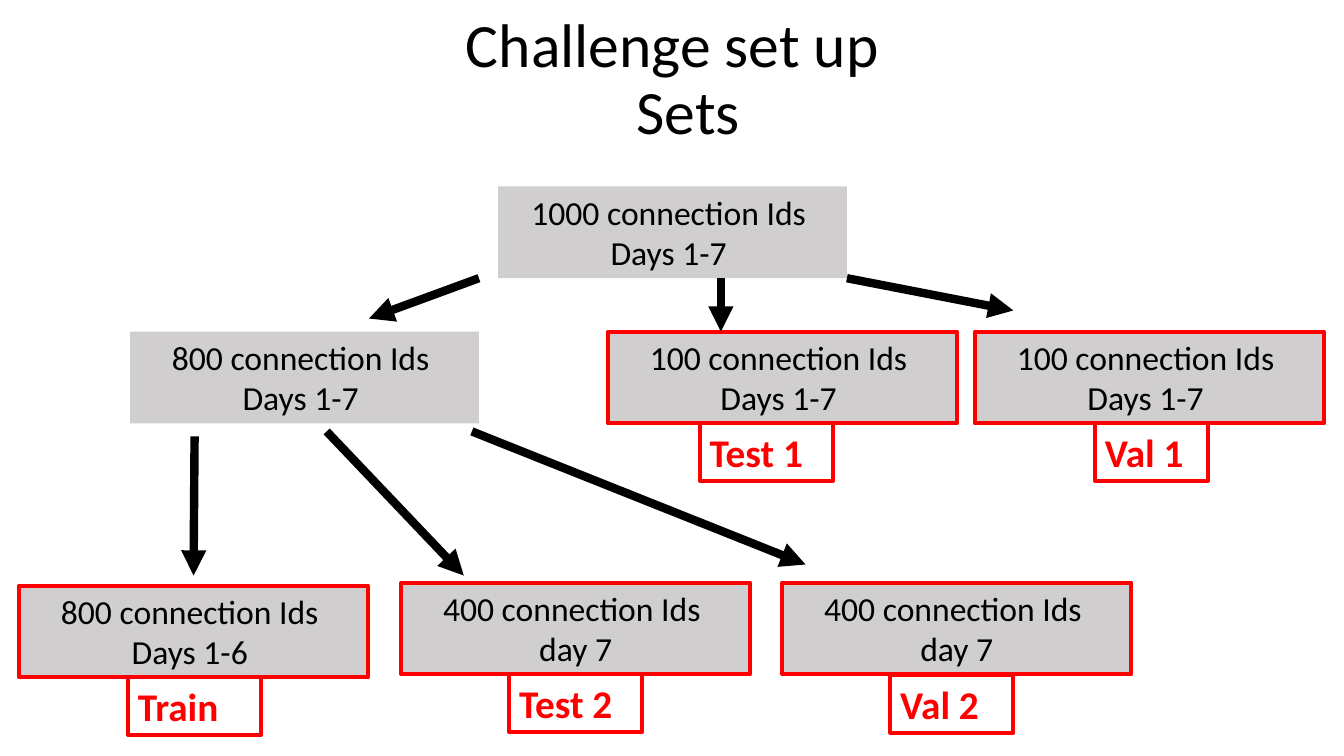
from dataclasses import dataclass

from lxml.etree import SubElement
from pptx import Presentation
from pptx.dml.color import RGBColor
from pptx.enum.shapes import MSO_CONNECTOR as Connector
from pptx.enum.text import MSO_ANCHOR as Anchor
from pptx.enum.text import MSO_AUTO_SIZE as AutoSize
from pptx.enum.text import PP_ALIGN as Align
from pptx.oxml.ns import qn
from pptx.slide import Slide
from pptx.text.text import _Paragraph as Paragraph
from pptx.util import Emu, Pt

PX_PER_INCH = 100
EMU_PER_PX = 914400 // PX_PER_INCH


@dataclass(frozen=True)
class Theme:
    font: str = "Calibri"
    ink: RGBColor = RGBColor(0x00, 0x00, 0x00)
    panel: RGBColor = RGBColor(0xD0, 0xCE, 0xCE)
    accent: RGBColor = RGBColor(0xFF, 0x00, 0x00)
    title_size: int = 44
    box_size: int = 24
    tag_size: int = 28
    outline: int = 3
    arrow: int = 6


@dataclass(frozen=True)
class IdSet:
    left: int
    top: int
    lines: tuple[str, ...]
    final: bool = True


@dataclass(frozen=True)
class Tag:
    left: int
    top: int
    width: int
    name: str


@dataclass(frozen=True)
class Arrow:
    x1: int
    y1: int
    x2: int
    y2: int


THEME = Theme()
SET_WIDTH, SET_HEIGHT, TAG_HEIGHT = 346, 91, 57
TITLE_INDENT = 31
TITLE_LINES = ("Challenge set up", "Sets")
WEEK = "Days 1-7 "

ID_SETS = (
    IdSet(494, 185, ("1000 connection Ids ", WEEK), final=False),
    IdSet(129, 329, ("800 connection Ids ", WEEK), final=False),
    IdSet(603, 329, ("100 connection Ids ", WEEK)),
    IdSet(967, 329, ("100 connection Ids ", WEEK)),
    IdSet(19, 581, ("800 connection Ids ", "Days 1-6 ")),
    IdSet(398, 578, ("400 connection Ids ", "day 7")),
    IdSet(776, 578, ("400 connection Ids ", "day 7")),
)
TAGS = (
    Tag(694, 420, 132, "Test 1"),
    Tag(1086, 420, 112, "Val 1"),
    Tag(127, 672, 132, "Train"),
    Tag(505, 669, 132, "Test 2"),
    Tag(883, 670, 122, "Val 2"),
)
ARROWS = (
    Arrow(715, 276, 715, 329),
    Arrow(840, 276, 1005, 308),
    Arrow(475, 276, 366, 316),
    Arrow(193, 433, 192, 571),
    Arrow(324, 428, 460, 571),
    Arrow(468, 428, 799, 560),
)


def px(length: int) -> Emu:
    return Emu(length * EMU_PER_PX)


def add_run(paragraph: Paragraph, text: str, size: int, color: RGBColor,
            bold: bool = False) -> None:
    run = paragraph.add_run()
    run.text = text
    run.font.name = THEME.font
    run.font.size = Pt(size)
    run.font.color.rgb = color
    run.font.bold = bold


def draw_title(slide: Slide) -> None:
    title = slide.shapes.title
    title.left, title.top, title.width, title.height = map(px, (92, 8, 1150, 145))
    frame = title.text_frame
    frame.vertical_anchor = Anchor.MIDDLE
    frame.auto_size = AutoSize.NONE
    heading = frame.paragraphs[0]
    heading.alignment = Align.CENTER
    heading.line_spacing = 0.9
    properties = heading._p.get_or_add_pPr()
    properties.set("marL", str(px(TITLE_INDENT)))
    properties.set("indent", str(px(-TITLE_INDENT)))
    for index, line in enumerate(TITLE_LINES):
        if index:
            heading.add_line_break()
        add_run(heading, line, THEME.title_size, THEME.ink)


def draw_id_set(slide: Slide, id_set: IdSet) -> None:
    box = slide.shapes.add_textbox(
        px(id_set.left), px(id_set.top), px(SET_WIDTH), px(SET_HEIGHT))
    box.fill.solid()
    box.fill.fore_color.rgb = THEME.panel
    if id_set.final:
        box.line.color.rgb = THEME.accent
        box.line.width = Pt(THEME.outline)
    frame = box.text_frame
    frame.word_wrap = True
    frame.auto_size = AutoSize.SHAPE_TO_FIT_TEXT
    for index, line in enumerate(id_set.lines):
        paragraph = frame.add_paragraph() if index else frame.paragraphs[0]
        paragraph.alignment = Align.CENTER
        add_run(paragraph, line, THEME.box_size, THEME.ink)


def draw_tag(slide: Slide, tag: Tag) -> None:
    box = slide.shapes.add_textbox(
        px(tag.left), px(tag.top), px(tag.width), px(TAG_HEIGHT))
    box.line.color.rgb = THEME.accent
    box.line.width = Pt(THEME.outline)
    frame = box.text_frame
    frame.word_wrap = True
    frame.auto_size = AutoSize.SHAPE_TO_FIT_TEXT
    add_run(frame.paragraphs[0], tag.name, THEME.tag_size, THEME.accent, bold=True)


def draw_arrow(slide: Slide, arrow: Arrow) -> None:
    link = slide.shapes.add_connector(
        Connector.STRAIGHT, px(arrow.x1), px(arrow.y1), px(arrow.x2), px(arrow.y2))
    link.line.color.rgb = THEME.ink
    link.line.width = Pt(THEME.arrow)
    SubElement(link.line._get_or_add_ln(), qn("a:tailEnd"), type="triangle")
    SubElement(link._element.spPr, qn("a:effectLst"))


def main() -> None:
    deck = Presentation()
    deck.slide_width, deck.slide_height = px(1333), px(750)
    slide = deck.slides.add_slide(deck.slide_layouts.get_by_name("Title Only"))
    draw_title(slide)
    for id_set in ID_SETS:
        draw_id_set(slide, id_set)
    for arrow in ARROWS:
        draw_arrow(slide, arrow)
    for tag in TAGS:
        draw_tag(slide, tag)
    deck.save("out.pptx")


if __name__ == "__main__":
    main()
